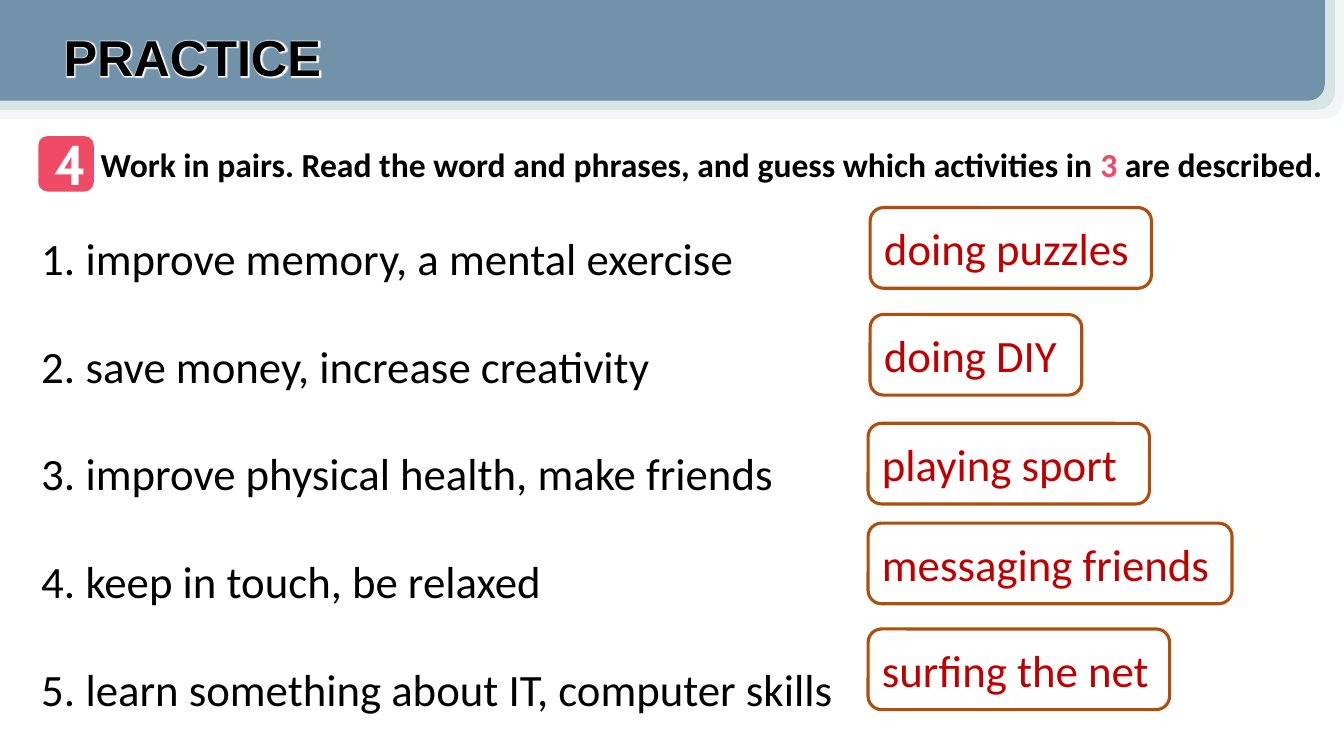
from dataclasses import dataclass

from lxml import etree
from pptx import Presentation, util as u
from pptx.dml.color import RGBColor
from pptx.enum import shapes as kinds, text as t
from pptx.oxml import parse_xml
from pptx.oxml.ns import nsdecls, qn

BLACK, WHITE, PINK = "000000", "FFFFFF", "EF4B66"


@dataclass
class Band:
    width: float
    height: float
    fill: str


@dataclass
class Answer:
    left: float
    top: float
    width: float
    words: str


BANDS = [
    Band(13.33, 1.18, "F3F6F6"),
    Band(13.24, 1.09, "D8E5E5"),
    Band(13.14, 1, "7192A9"),
]
ANSWERS = [
    Answer(8.63, 2.06, 2.79, "doing puzzles"),
    Answer(8.63, 3.12, 2.1, "doing DIY"),
    Answer(8.61, 4.2, 2.79, "playing sport"),
    Answer(8.61, 5.19, 3.61, "messaging friends"),
    Answer(8.61, 6.24, 2.99, "surfing the net"),
]
CLUES = [
    "improve memory, a mental exercise",
    "save money, increase creativity",
    "improve physical health, make friends",
    "keep in touch, be relaxed",
    "learn something about IT, computer skills",
]


def color(value: str) -> RGBColor:
    return RGBColor.from_string(value)


def place(left: float, top: float, width: float, height: float) -> list:
    return [u.Inches(n) for n in (left, top, width, height)]


def style(item, face: str, size: int, ink: str, bold: bool = False) -> None:
    item.font.name = face
    item.font.size = u.Pt(size)
    item.font.bold = bold
    item.font.color.rgb = color(ink)


def add_shape(host, kind, box: list, fill: str = "", line: str = ""):
    shape = host.add_shape(kind, *box)
    shape.shadow.inherit = False
    if fill:
        shape.fill.solid()
        shape.fill.fore_color.rgb = color(fill)
    else:
        shape.fill.background()
    if line:
        shape.line.color.rgb = color(line)
        shape.line.width = u.Pt(2.25)
    else:
        shape.line.fill.background()
    return shape


def add_text(slide, box: list):
    frame = slide.shapes.add_textbox(*box).text_frame
    frame.word_wrap = True
    return frame


def add_bands(slide) -> None:
    group = slide.shapes.add_group_shape()
    for band in BANDS:
        box = place(0, 0, band.width, band.height)
        shape = add_shape(group.shapes, kinds.MSO_SHAPE.ROUND_1_RECTANGLE, box, band.fill)
        shape._element.spPr.xfrm.set("flipV", "1")


def add_title(slide) -> None:
    title = slide.shapes.title
    title.left, title.top, title.width, title.height = place(0.53, 0.21, 4.52, 0.71)
    frame = title.text_frame
    frame.vertical_anchor = t.MSO_ANCHOR.TOP
    frame.auto_size = t.MSO_AUTO_SIZE.NONE
    para = frame.paragraphs[0]
    para.alignment = t.PP_ALIGN.LEFT
    run = para.add_run()
    run.text = "PRACTICE"
    style(run, "Arial", 36, BLACK, True)
    glow = parse_xml(
        f'<a:effectLst {nsdecls("a")}><a:glow rad="38100">'
        f'<a:srgbClr val="{WHITE}"/></a:glow></a:effectLst>'
    )
    run.font._element.find(qn("a:solidFill")).addnext(glow)
    slide.shapes._spTree.append(title._element)


def add_task(slide) -> None:
    para = add_text(slide, place(0.9, 1.38, 12.34, 0.5)).paragraphs[0]
    parts = [
        ("Work in pairs. Read the word and phrases, and guess which activities in ", BLACK),
        ("3 ", PINK),
        ("are described.", BLACK),
    ]
    for words, ink in parts:
        run = para.add_run()
        run.text = words
        style(run, "Calibri", 24, ink, True)
    add_shape(slide.shapes, kinds.MSO_SHAPE.ROUNDED_RECTANGLE,
              place(0.38, 1.35, 0.55, 0.55), PINK)
    badge = add_text(slide, place(0.44, 1.24, 0.43, 0.77)).paragraphs[0]
    badge.text = "4"
    badge.alignment = t.PP_ALIGN.CENTER
    style(badge, "Cabin", 40, WHITE, True)


def add_clues(slide) -> None:
    frame = add_text(slide, place(0.31, 1.71, 8.3, 5.49))
    for i, clue in enumerate(CLUES):
        para = frame.add_paragraph() if i else frame.paragraphs[0]
        para.text = clue
        para.line_spacing = 2.0
        style(para, "Calibri", 32, BLACK)
        props = para._p.get_or_add_pPr()
        hang = u.Inches(0.44)
        props.set("marL", str(hang))
        props.set("indent", str(-hang))
        mark = etree.Element(qn("a:buAutoNum"), type="arabicPeriod")
        props.find(qn("a:defRPr")).addprevious(mark)


def add_answers(slide) -> None:
    for answer in ANSWERS:
        box = place(answer.left, answer.top, answer.width, 0.8)
        shape = add_shape(slide.shapes, kinds.MSO_SHAPE.ROUNDED_RECTANGLE,
                          box, line="AD4F0F")
        frame = shape.text_frame
        frame.word_wrap = True
        frame.vertical_anchor = t.MSO_ANCHOR.MIDDLE
        para = frame.paragraphs[0]
        para.text = answer.words
        para.alignment = t.PP_ALIGN.LEFT
        style(para, "Calibri", 32, "C00000")


def main() -> None:
    deck = Presentation()
    deck.slide_width, deck.slide_height = u.Inches(13.33), u.Inches(7.5)
    slide = deck.slides.add_slide(deck.slide_layouts[5])
    add_bands(slide)
    add_task(slide)
    add_title(slide)
    add_clues(slide)
    add_answers(slide)
    deck.save("out.pptx")


if __name__ == "__main__":
    main()
